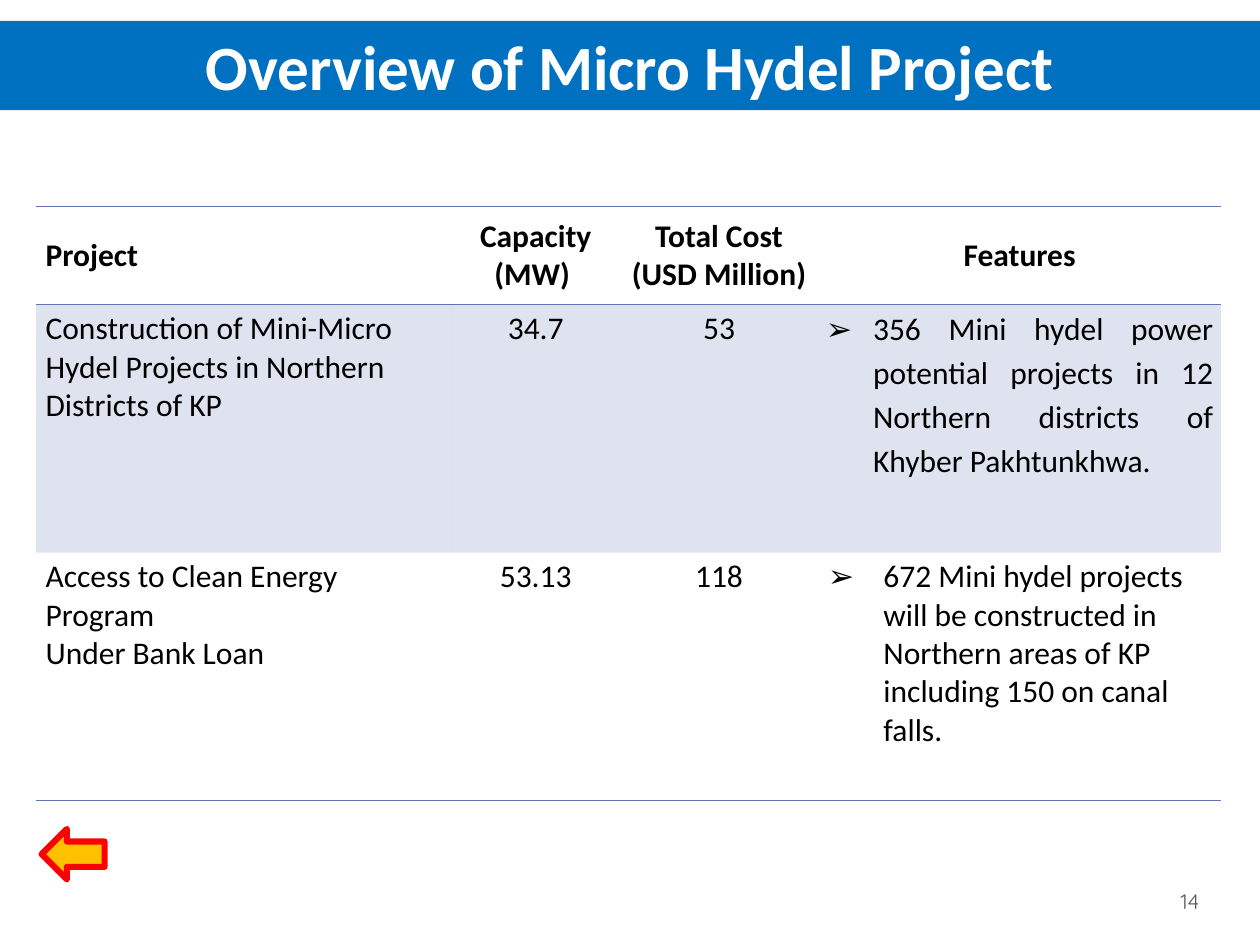
from lxml.etree import SubElement
from pptx import Presentation
from pptx.dml.color import RGBColor
from pptx.enum.shapes import MSO_SHAPE as Shape
from pptx.enum.text import MSO_ANCHOR as Anchor, MSO_AUTO_SIZE as AutoSize, PP_ALIGN as Align
from pptx.oxml import parse_xml
from pptx.oxml.ns import nsdecls, qn
from pptx.util import Cm, Pt

BLUE, RULE, WHITE, BLACK = "0070C0", "6076B4", "FFFFFF", "000000"
NO_STYLE = "{2D5ABB26-0587-4C30-8999-92F81FD0307C}"
COLUMN_WIDTHS = [8.38, 3.38, 4.01, 8.11]
ROW_HEIGHTS = [1.98, 5, 5]
ROW_RULES = ["TB", "T", "B"]
ALIGNS = [Align.LEFT, Align.CENTER, Align.CENTER, Align.CENTER]
CELL_MARGINS = dict(margin_left=Cm(0.19), margin_right=Cm(0.19),
                    margin_top=Cm(0.1), margin_bottom=Cm(0.1))
TIGHT_MARGINS = dict(margin_left=Cm(0.15), margin_right=Cm(0.15),
                     margin_top=0, margin_bottom=0)
ROWS = [
    ["Project", "Capacity\n(MW) ", "Total Cost\n(USD Million)", "Features"],
    ["Construction of Mini-Micro Hydel Projects in Northern Districts of KP",
     "34.7", "53",
     "356 Mini hydel power potential projects in 12 Northern districts of "
     "Khyber Pakhtunkhwa."],
    ["Access to Clean Energy Program\nUnder Bank Loan", "53.13", "118",
     "672 Mini hydel projects will be constructed in Northern areas of KP "
     "including 150 on canal falls."],
]


def color(hex_string):
    return RGBColor.from_string(hex_string)


def apply(target, values):
    for name, value in values.items():
        setattr(target, name, value)


def fill_solid(target, hex_string):
    target.fill.solid()
    target.fill.fore_color.rgb = color(hex_string)


def write_text(frame, text, size, hex_string, align, name="Calibri", bold=False):
    frame.text = text
    for paragraph in frame.paragraphs:
        paragraph.alignment = align
        apply(paragraph.font, dict(size=Pt(size), name=name, bold=bold))
        paragraph.font.color.rgb = color(hex_string)


def add_bullet(paragraph, indent):
    properties = paragraph._p.get_or_add_pPr()
    properties.set("marL", str(Cm(indent)))
    properties.set("indent", str(-Cm(indent)))
    for element in ('buFont {} typeface="Calibri"', 'buChar {} char="➢"'):
        bullet = parse_xml(f'<a:{element.format(nsdecls("a"))}/>')
        properties.insert_element_before(bullet, "a:tabLst", "a:defRPr", "a:extLst")


def set_rules(cell, sides):
    """Draw thin lines on the given sides of a cell and clear the others."""
    properties = cell._tc.get_or_add_tcPr()
    solid = f'<a:solidFill><a:srgbClr val="{RULE}"/></a:solidFill>'
    for position, side in enumerate("LRTB"):
        line = solid if side in sides else "<a:noFill/>"
        properties.insert(position, parse_xml(
            f'<a:ln{side} {nsdecls("a")} w="12700">{line}</a:ln{side}>'))


def tint(cell):
    """Fill a cell with the rule colour at 20 % opacity."""
    fill_solid(cell, RULE)
    tone = next(cell._tc.tcPr.iter(qn("a:srgbClr")))
    SubElement(tone, qn("a:alpha")).set("val", "20000")


def format_title(title):
    apply(title, dict(left=0, top=Cm(0.42), width=Cm(25.4), height=Cm(1.8)))
    fill_solid(title, BLUE)
    write_text(title.text_frame, "Overview of Micro Hydel Project", 36, WHITE,
               Align.CENTER, bold=True)
    apply(title.text_frame, dict(vertical_anchor=Anchor.MIDDLE, word_wrap=True,
                                 auto_size=AutoSize.NONE))


def add_project_table(slide):
    table = slide.shapes.add_table(
        len(ROWS), len(COLUMN_WIDTHS), Cm(0.73), Cm(4.16),
        Cm(sum(COLUMN_WIDTHS)), Cm(sum(ROW_HEIGHTS))).table
    table._tbl.tblPr.find(qn("a:tableStyleId")).text = NO_STYLE
    table.horz_banding = False
    for column, width in zip(table.columns, COLUMN_WIDTHS):
        column.width = Cm(width)
    for row, height in zip(table.rows, ROW_HEIGHTS):
        row.height = Cm(height)
    for row_index, texts in enumerate(ROWS):
        header = row_index == 0
        for column_index, text in enumerate(texts):
            cell = table.cell(row_index, column_index)
            write_text(cell.text_frame, text, 18, BLACK, ALIGNS[column_index], bold=header)
            apply(cell, CELL_MARGINS)
            cell.vertical_anchor = Anchor.MIDDLE if header else Anchor.TOP
            if row_index == 1:
                tint(cell)
            else:
                cell.fill.background()
            set_rules(cell, ROW_RULES[row_index])
    format_features(table)


def format_features(table):
    first, second = table.cell(1, 3), table.cell(2, 3)
    apply(first, TIGHT_MARGINS)
    paragraph = first.text_frame.paragraphs[0]
    apply(paragraph, dict(alignment=Align.JUSTIFY, line_spacing=1.15))
    add_bullet(paragraph, 0.95)
    paragraph = second.text_frame.paragraphs[0]
    paragraph.alignment = Align.LEFT
    add_bullet(paragraph, 1.12)


def add_back_arrow(slide):
    arrow = slide.shapes.add_shape(Shape.LEFT_ARROW, Cm(0.84), Cm(16.71), Cm(1.27), Cm(1.02))
    arrow.shadow.inherit = False
    fill_solid(arrow, "FFC000")
    arrow.line.color.rgb = color("FF0000")
    arrow.line.width = Pt(3.5)


def add_slide_number(slide):
    box = slide.shapes.add_textbox(Cm(23.72), Cm(17.65), Cm(1.55), Cm(1.02))
    write_text(box.text_frame, "14", 12, "595959", Align.LEFT, name="Quicksand")
    apply(box.text_frame, dict(word_wrap=True, vertical_anchor=Anchor.MIDDLE,
                               margin_left=Cm(0.08), margin_right=Cm(0.13)))


def main():
    presentation = Presentation()
    apply(presentation, dict(slide_width=Cm(25.4), slide_height=Cm(19.05)))
    slide = presentation.slides.add_slide(presentation.slide_layouts[5])
    format_title(slide.shapes.title)
    add_project_table(slide)
    add_back_arrow(slide)
    add_slide_number(slide)
    presentation.save("out.pptx")


if __name__ == "__main__":
    main()
